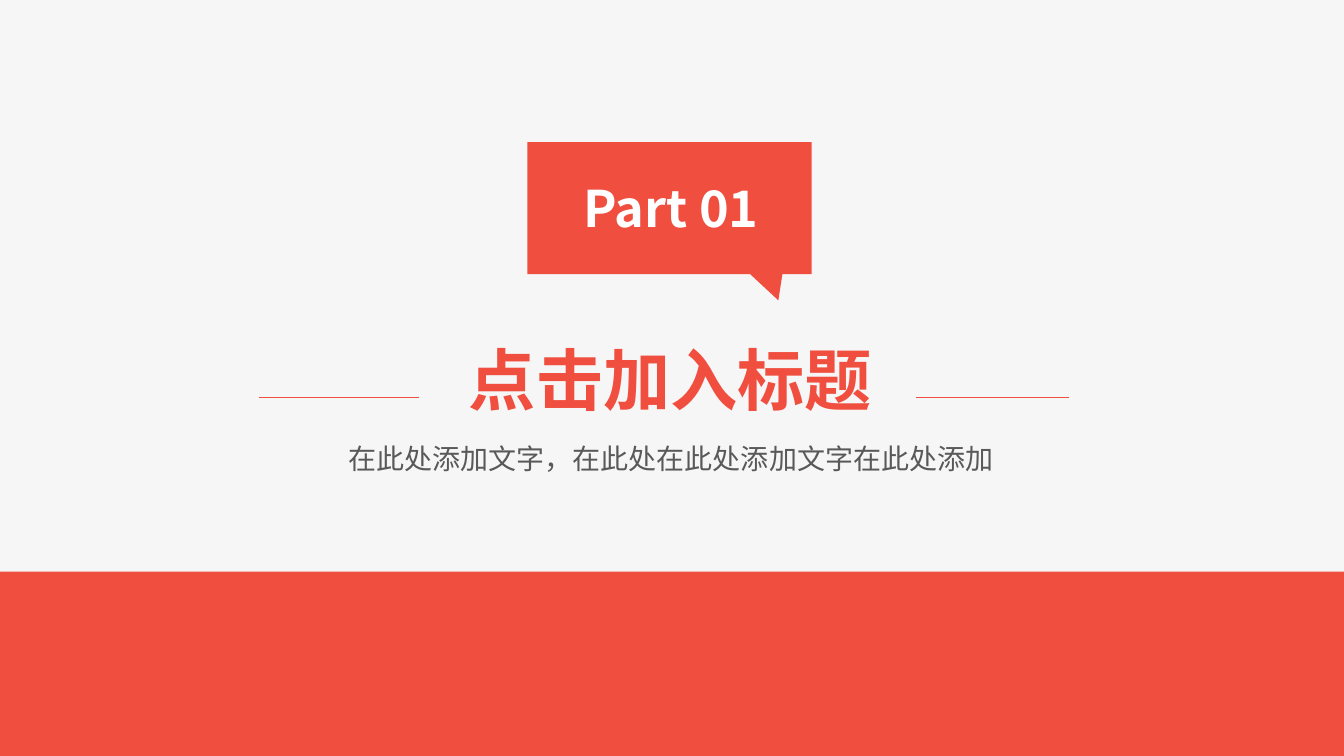
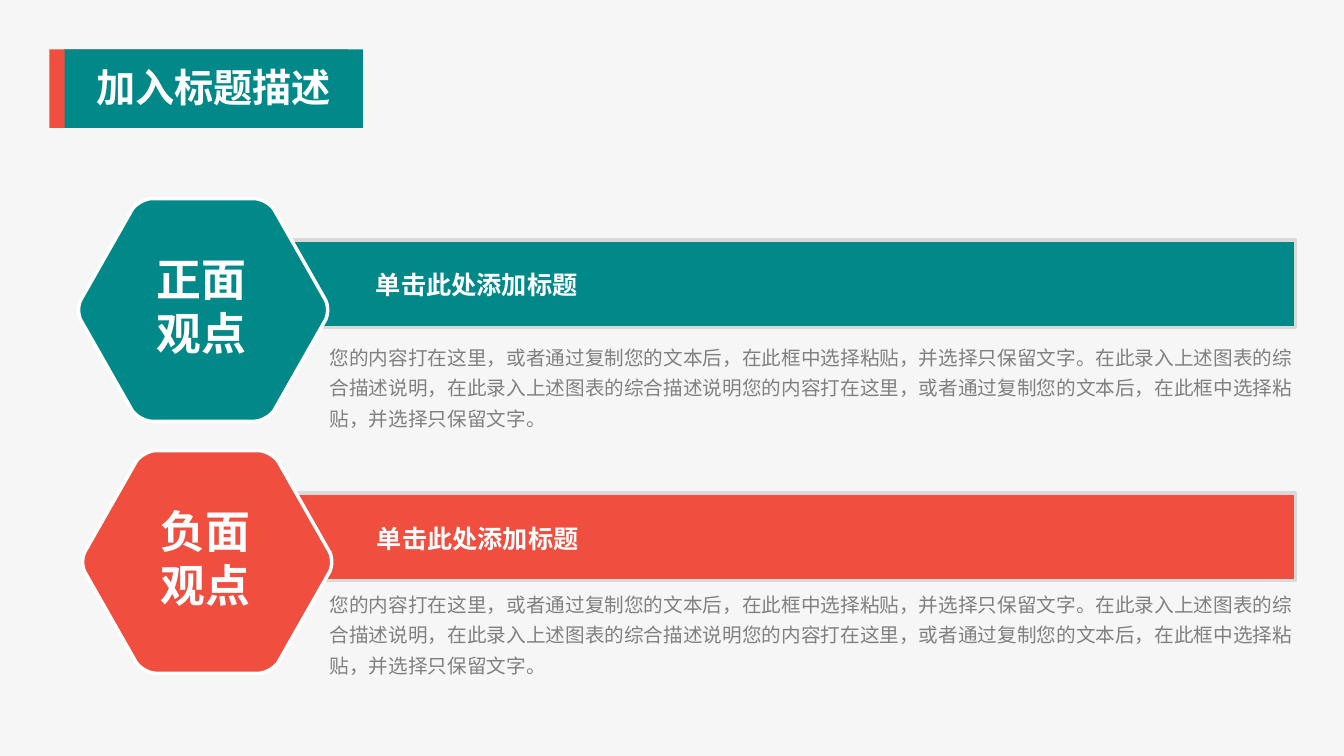
import pptx
import pptx.util
import pptx.dml.color
import pptx.enum.shapes
import pptx.enum.text
import pptx.oxml.ns
import lxml.etree

Inches = pptx.util.Inches
Pt = pptx.util.Pt
SHAPES = pptx.enum.shapes.MSO_SHAPE
ALIGN = pptx.enum.text.PP_ALIGN
qn = pptx.oxml.ns.qn

# Content
COLORS = {"background": "F6F6F6", "red": "F04E3F", "teal": "018989",
          "white": "FFFFFF", "border": "D9D9D9", "subtitle": "595959",
          "body": "808080"}
FONT = "Noto Sans CJK SC"
HEXAGON_FONT = "TeX Gyre Adventor"
TIGHT = (0.07, 0.04)
NORMAL = (0.1, 0.05)

SECTION = {"part": "Part 01", "title": "点击加入标题",
           "subtitle": "在此处添加文字，在此处在此处添加文字在此处添加"}
BUBBLE = [(5.23, 1.41), (8.05, 1.41), (8.05, 2.72), (7.76, 2.72),
          (7.72, 2.98), (7.44, 2.72), (5.23, 2.72)]
RULES = [(2.57, 4.16), (9.09, 10.6)]

PAGE_TITLE = "加入标题描述"
DESCRIPTION = (
    "您的内容打在这里，或者通过复制您的文本后，在此框中选择粘贴，并选择只保留文字。"
    "在此录入上述图表的综合描述说明，在此录入上述图表的综合描述说明"
    "您的内容打在这里，或者通过复制您的文本后，在此框中选择粘贴，并选择只保留文字。")
VIEWS = [
    {"label": "正面\n观点", "heading": "单击此处添加标题", "color": "teal",
     "hexagon": (0.77, 1.97), "bar": 2.38, "heading_at": (3.63, 2.62), "body": 3.32},
    {"label": "负面\n观点", "heading": "单击此处添加标题", "color": "red",
     "hexagon": (0.81, 4.47), "bar": 4.89, "heading_at": (3.64, 5.14), "body": 5.77},
]

# Rounded hexagon: Bezier corners of the left half, mirrored for the right
HEXAGON_WIDTH = 2.49
LEFT_CORNERS = [
    [(0.74, 2.21), (0.67, 2.21), (0.58, 2.16), (0.54, 2.1)],
    [(0.04, 1.22), (0, 1.16), (0, 1.05), (0.04, 0.99)],
    [(0.54, 0.11), (0.58, 0.05), (0.67, 0), (0.74, 0)],
]


def color(name):
    return pptx.dml.color.RGBColor.from_string(COLORS[name])


def paint(shape, fill, line=None):
    shape.shadow.inherit = False
    shape.fill.solid()
    shape.fill.fore_color.rgb = color(fill)
    if line:
        shape.line.color.rgb = color(line)
        shape.line.width = Pt(2.5)
    else:
        shape.line.fill.background()


def add_box(slide, box, fill, line=None):
    shape = slide.shapes.add_shape(SHAPES.RECTANGLE, *map(Inches, box))
    paint(shape, fill, line)


def add_outline(slide, points, fill, line=None):
    corners = [(Inches(x), Inches(y)) for x, y in points]
    builder = slide.shapes.build_freeform(*corners[0])
    builder.add_line_segments(corners[1:], close=True)
    paint(builder.convert_to_shape(), fill, line)


def add_text(slide, box, text, size, fill, bold=False, align=ALIGN.CENTER,
             insets=NORMAL, font=FONT, spacing=None):
    frame = slide.shapes.add_textbox(*map(Inches, box)).text_frame
    frame.word_wrap = True
    frame.margin_left = frame.margin_right = Inches(insets[0])
    frame.margin_top = frame.margin_bottom = Inches(insets[1])
    frame.text = text
    for paragraph in frame.paragraphs:
        paragraph.alignment = align
        if spacing:
            paragraph.line_spacing = spacing
        for run in paragraph.runs:
            run.font.size = Pt(size)
            run.font.bold = bold
            run.font.color.rgb = color(fill)
            run.font.name = font
            east_asian = lxml.etree.SubElement(run.font._element, qn("a:ea"))
            east_asian.set("typeface", font)


def add_rule(slide, left, right, y):
    rule = slide.shapes.add_connector(
        pptx.enum.shapes.MSO_CONNECTOR.STRAIGHT,
        Inches(left), Inches(y), Inches(right), Inches(y))
    rule.line.color.rgb = color("red")
    rule.line.width = Pt(0.75)
    lxml.etree.SubElement(rule._element.spPr, qn("a:effectLst"))


def bezier(points, steps=10):
    for step in range(steps + 1):
        t = step / steps
        weights = ((1 - t) ** 3, 3 * t * (1 - t) ** 2, 3 * t * t * (1 - t), t ** 3)
        yield tuple(sum(w * p[axis] for w, p in zip(weights, points))
                    for axis in (0, 1))


def hexagon_points(left, top):
    half = [point for corner in LEFT_CORNERS for point in bezier(corner)]
    mirrored = [(HEXAGON_WIDTH - x, y) for x, y in reversed(half)]
    return [(left + x, top + y) for x, y in half + mirrored]


def new_slide(presentation):
    slide = presentation.slides.add_slide(presentation.slide_layouts[6])
    slide.background.fill.solid()
    slide.background.fill.fore_color.rgb = color("background")
    return slide


def build_section(presentation):
    slide = new_slide(presentation)
    add_text(slide, (3.84, 3.31, 5.62, 0.91), SECTION["title"], 48, "red", bold=True)
    add_text(slide, (1.42, 4.33, 10.47, 0.44), SECTION["subtitle"], 20, "subtitle")
    for left, right in RULES:
        add_rule(slide, left, right, 3.94)
    add_outline(slide, BUBBLE, "red")
    add_text(slide, (4.29, 1.72, 4.73, 0.68), SECTION["part"], 36, "white",
             bold=True, insets=TIGHT)
    add_box(slide, (0, 5.67, 13.33, 1.83), "red")


def build_views(presentation):
    slide = new_slide(presentation)
    # Title tag
    for left, fill in ((0.49, "red"), (0.64, "teal")):
        add_box(slide, (left, 0.49, 2.96, 0.78), fill)
    add_text(slide, (0.47, 0.59, 3.3, 0.55), PAGE_TITLE, 28, "white",
             bold=True, insets=TIGHT)
    # One bar, description and hexagon for each view
    for view in VIEWS:
        left, top = view["hexagon"]
        add_box(slide, (2.3, view["bar"], 10.55, 0.87), view["color"], "border")
        add_text(slide, (*view["heading_at"], 5.56, 0.4), view["heading"], 18,
                 "white", bold=True, align=ALIGN.LEFT)
        add_text(slide, (3.2, view["body"], 9.75, 0.99), DESCRIPTION, 14, "body",
                 align=ALIGN.LEFT, insets=TIGHT, spacing=1.3)
        add_outline(slide, hexagon_points(left, top), view["color"], "white")
        add_text(slide, (left + 0.36, top + 0.49, 1.74, 1.15), view["label"], 32,
                 "white", bold=True, insets=TIGHT, font=HEXAGON_FONT)


def main():
    presentation = pptx.Presentation()
    presentation.slide_width = Inches(13.33)
    presentation.slide_height = Inches(7.5)
    build_section(presentation)
    build_views(presentation)
    presentation.save("out.pptx")


if __name__ == "__main__":
    main()
